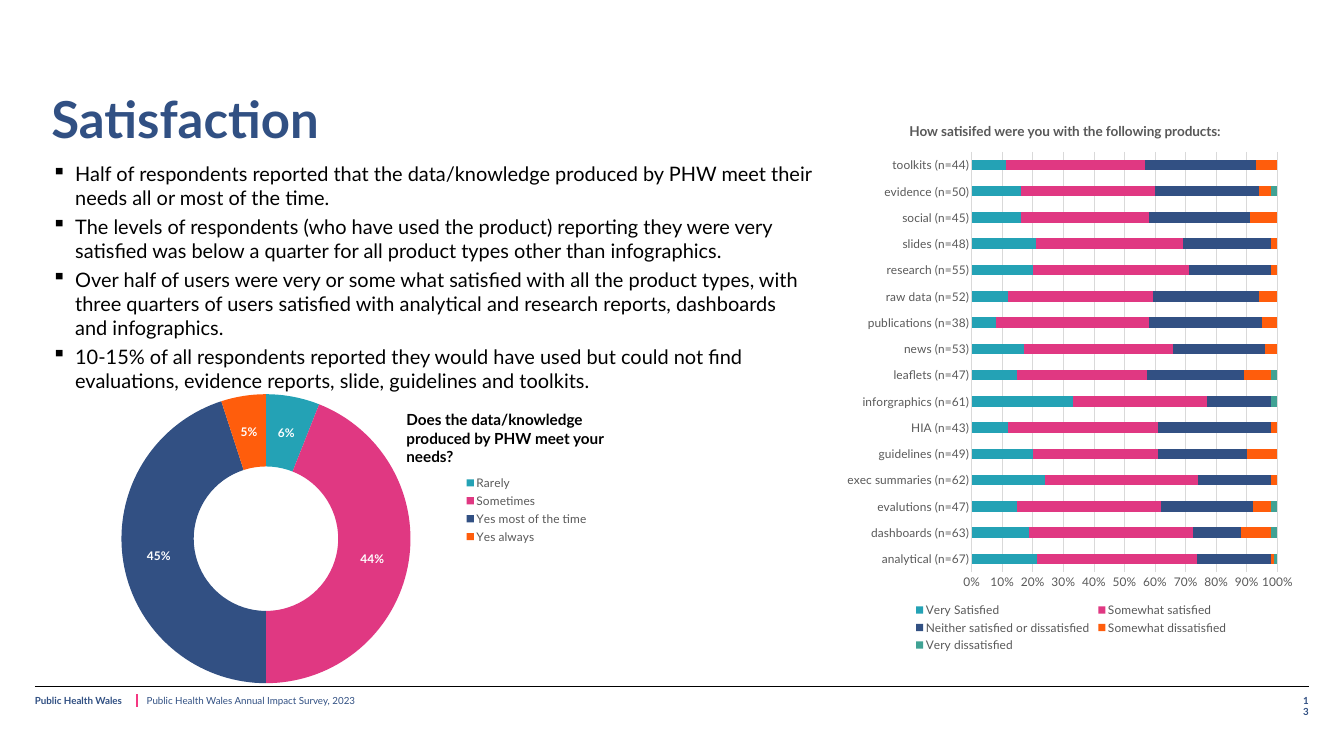
from lxml import etree
from pptx import Presentation
from pptx.chart.data import CategoryChartData
from pptx.dml.color import RGBColor
from pptx.enum.chart import XL_CHART_TYPE, XL_LEGEND_POSITION, XL_TICK_MARK
from pptx.enum.shapes import MSO_CONNECTOR
from pptx.oxml import parse_xml
from pptx.oxml.ns import nsdecls, qn
from pptx.util import Inches, Pt

DOUGHNUT = XL_CHART_TYPE.DOUGHNUT
STACKED_BARS = XL_CHART_TYPE.BAR_STACKED_100
LEGEND_RIGHT = XL_LEGEND_POSITION.RIGHT
LEGEND_BOTTOM = XL_LEGEND_POSITION.BOTTOM
NO_TICKS = XL_TICK_MARK.NONE
STRAIGHT = MSO_CONNECTOR.STRAIGHT

FONT = "Lato"
COLORS = {
    "navy": "315083", "black": "000000", "white": "FFFFFF", "gray": "595959",
    "grid": "D9D9D9", "divider": "F43882", "teal": "24A2B5", "pink": "E03882",
    "blue": "325083", "orange": "FF5D0C", "green": "40A294",
}
SERIES_COLORS = ["teal", "pink", "blue", "orange", "green"]

FINDINGS = [
    "Half of respondents reported that the data/knowledge produced by PHW meet their needs all or most of the time.",
    "The levels of respondents (who have used the product) reporting they were very satisfied was below a quarter "
    "for all product types other than infographics.",
    "Over half of users were very or some what satisfied with all the product types, with three quarters of users "
    "satisfied with analytical and research reports, dashboards and infographics.",
    "10-15% of all respondents reported they would have used but could not find evaluations, evidence reports, "
    "slide, guidelines and toolkits.",
]

NEEDS_QUESTION = "Does the data/knowledge produced by PHW meet your needs?"
NEEDS = {"Rarely": 6, "Sometimes": 44, "Yes most of the time": 45, "Yes always": 5}

PRODUCTS_TITLE = "How satisifed were you with the following products:"
RATINGS = [
    "Very Satisfied", "Somewhat satisfied", "Neither satisfied or dissatisfied",
    "Somewhat dissatisfied", "Very dissatisfied",
]
PRODUCTS = [
    ("analytical (n=67)", 21, 52, 24, 1, 1),
    ("dashboards (n=63)", 19, 54, 16, 10, 2),
    ("evalutions (n=47)", 15, 47, 30, 6, 2),
    ("exec summaries (n=62)", 24, 50, 24, 2, 0),
    ("guidelines (n=49)", 20, 41, 29, 10, 0),
    ("HIA (n=43)", 12, 49, 37, 2, 0),
    ("inforgraphics (n=61)", 33, 44, 21, 0, 2),
    ("leaflets (n=47)", 15, 43, 32, 9, 2),
    ("news (n=53)", 17, 49, 30, 4, 0),
    ("publications (n=38)", 8, 50, 37, 5, 0),
    ("raw data (n=52)", 12, 48, 35, 6, 0),
    ("research (n=55)", 20, 51, 27, 2, 0),
    ("slides (n=48)", 21, 48, 29, 2, 0),
    ("social (n=45)", 16, 42, 33, 9, 0),
    ("evidence (n=50)", 16, 44, 34, 4, 2),
    ("toolkits (n=44)", 11, 45, 36, 7, 0),
]

FOOTER_TOP = 11.36
RULES = [
    ((0.57, 11.22, 21.41, 11.22), "black", 0.41),
    ((2.24, 11.36, 2.24, 11.57), "divider", 1.65),
]
TEXTS = [
    ("Satisfaction", (0.84, 1.41, 7.15, 1.68), (0, 0.02, 0, 0), 60, "navy", True),
    (NEEDS_QUESTION, (6.55, 6.67, 3.69, 1.01), (0.1, 0.05, 0.1, 0.05), 18, "black", True),
    ("Public Health Wales", (0.57, FOOTER_TOP, 1.55, 0.21), (0, 0, 0, 0), 11.5, "navy", True),
    ("Public Health Wales Annual Impact Survey, 2023", (2.4, FOOTER_TOP, 4.81, 0.2),
     (0, 0, 0, 0), 11.5, "navy", False),
    ("13", (21.28, FOOTER_TOP, 0.19, 0.21), (0.04, 0, 0, 0), 11.5, "navy", True),
]


def rgb(name):
    return RGBColor.from_string(COLORS[name])


def style_font(font, size, color, bold=False):
    font.name, font.size, font.bold = FONT, Pt(size), bold
    font.color.rgb = rgb(color)


def add_text(slide, lines, box, insets, size, color, bold=False, bullet=None):
    frame = slide.shapes.add_textbox(*map(Inches, box)).text_frame
    frame.word_wrap = True
    (frame.margin_left, frame.margin_top,
     frame.margin_right, frame.margin_bottom) = map(Inches, insets)
    frame.text = "\n".join(lines)
    for paragraph in frame.paragraphs:
        if bullet:
            properties = paragraph._p.get_or_add_pPr()
            properties.set("marL", str(Inches(0.39)))
            properties.set("indent", str(Inches(-0.38)))
            etree.SubElement(properties, qn("a:buChar")).set("char", bullet)
            paragraph.space_after = Pt(6)
        for run in paragraph.runs:
            style_font(run.font, size, color, bold)


def add_rule(slide, ends, color, width):
    rule = slide.shapes.add_connector(STRAIGHT, *map(Inches, ends))
    rule.line.color.rgb = rgb(color)
    rule.line.width = Pt(width)
    etree.SubElement(rule._element.spPr, qn("a:effectLst"))


def set_layout(part, index, fractions, inner=False):
    for old in part.findall(qn("c:layout")):
        part.remove(old)
    target = '<c:layoutTarget val="inner"/>' if inner else ""
    modes = '<c:xMode val="edge"/><c:yMode val="edge"/>'
    sizes = "".join(f'<c:{key} val="{value}"/>' for key, value in zip("xywh", fractions))
    part.insert(index, parse_xml(
        f'<c:layout {nsdecls("c")}><c:manualLayout>{target}{modes}{sizes}</c:manualLayout></c:layout>'))


def add_chart(slide, kind, box, categories, series, plot_area, legend_position, legend_area):
    data = CategoryChartData()
    data.categories = categories
    for name, values in series:
        data.add_series(name, values)
    chart = slide.shapes.add_chart(kind, *map(Inches, box), data).chart
    style_font(chart.font, 14, "black")
    chart.has_title = False
    chart.has_legend = True
    chart.legend.position = legend_position
    chart.legend.include_in_layout = False
    style_font(chart.legend.font, 14, "gray")
    set_layout(chart.legend._element, 1, legend_area)
    set_layout(chart._chartSpace.chart.plotArea, 0, plot_area, inner=True)
    return chart


def paint(part, color):
    part.format.fill.solid()
    part.format.fill.fore_color.rgb = rgb(color)


def add_needs_chart(slide):
    chart = add_chart(slide, DOUGHNUT, (0.84, 6.45, 8.89, 4.73), list(NEEDS),
                      [("Series 1", list(NEEDS.values()))], (0.07, 0, 0.65, 1),
                      LEGEND_RIGHT, (0.76, 0.27, 0.23, 0.26))
    plot = chart.plots[0]
    for index, color in enumerate(SERIES_COLORS[:len(NEEDS)]):
        paint(plot.series[0].points[index], color)
    plot.has_data_labels = True
    labels = plot.data_labels
    labels.show_percentage, labels.show_value = True, False
    labels.number_format, labels.number_format_is_linked = "0%", False
    style_font(labels.font, 14, "white", True)


def add_products_chart(slide):
    products, *scores = zip(*PRODUCTS)
    chart = add_chart(slide, STACKED_BARS, (13.7, 1.67, 7.58, 9.05), products,
                      zip(RATINGS, scores), (0.29, 0.09, 0.66, 0.76),
                      LEGEND_BOTTOM, (0.16, 0.9, 0.69, 0.1))
    plot = chart.plots[0]
    plot.gap_width, plot.overlap, plot.vary_by_categories = 150, 100, False
    for series, color in zip(plot.series, SERIES_COLORS):
        paint(series, color)

    title = chart.chart_title.text_frame
    title.text = PRODUCTS_TITLE
    style_font(title.paragraphs[0].runs[0].font, 16, "gray", True)
    set_layout(chart.chart_title._element, 1, (0.15, 0.03))

    product_axis, share_axis = chart.category_axis, chart.value_axis
    for axis in (product_axis, share_axis):
        axis.major_tick_mark = axis.minor_tick_mark = NO_TICKS
        style_font(axis.tick_labels.font, 14, "gray")
    share_axis.minimum_scale, share_axis.maximum_scale, share_axis.major_unit = 0, 1, 0.1
    share_axis.tick_labels.number_format = "0%"
    share_axis.tick_labels.number_format_is_linked = False
    share_axis.format.line.fill.background()
    for line in (product_axis.format.line, share_axis.major_gridlines.format.line):
        line.color.rgb = rgb("grid")
        line.width = Pt(0.75)


def main():
    """Build the satisfaction survey slide."""
    deck = Presentation()
    deck.slide_width, deck.slide_height = Inches(21.99), Inches(12.37)
    slide = deck.slides.add_slide(deck.slide_layouts[6])
    for rule in RULES:
        add_rule(slide, *rule)
    add_text(slide, FINDINGS, (0.84, 2.63, 12.46, 3.83), (0, 0.01, 0, 0), 23.5, "black", bullet="▪")
    for text, *look in TEXTS:
        add_text(slide, [text], *look)
    add_needs_chart(slide)
    add_products_chart(slide)
    deck.save("out.pptx")


if __name__ == "__main__":
    main()
